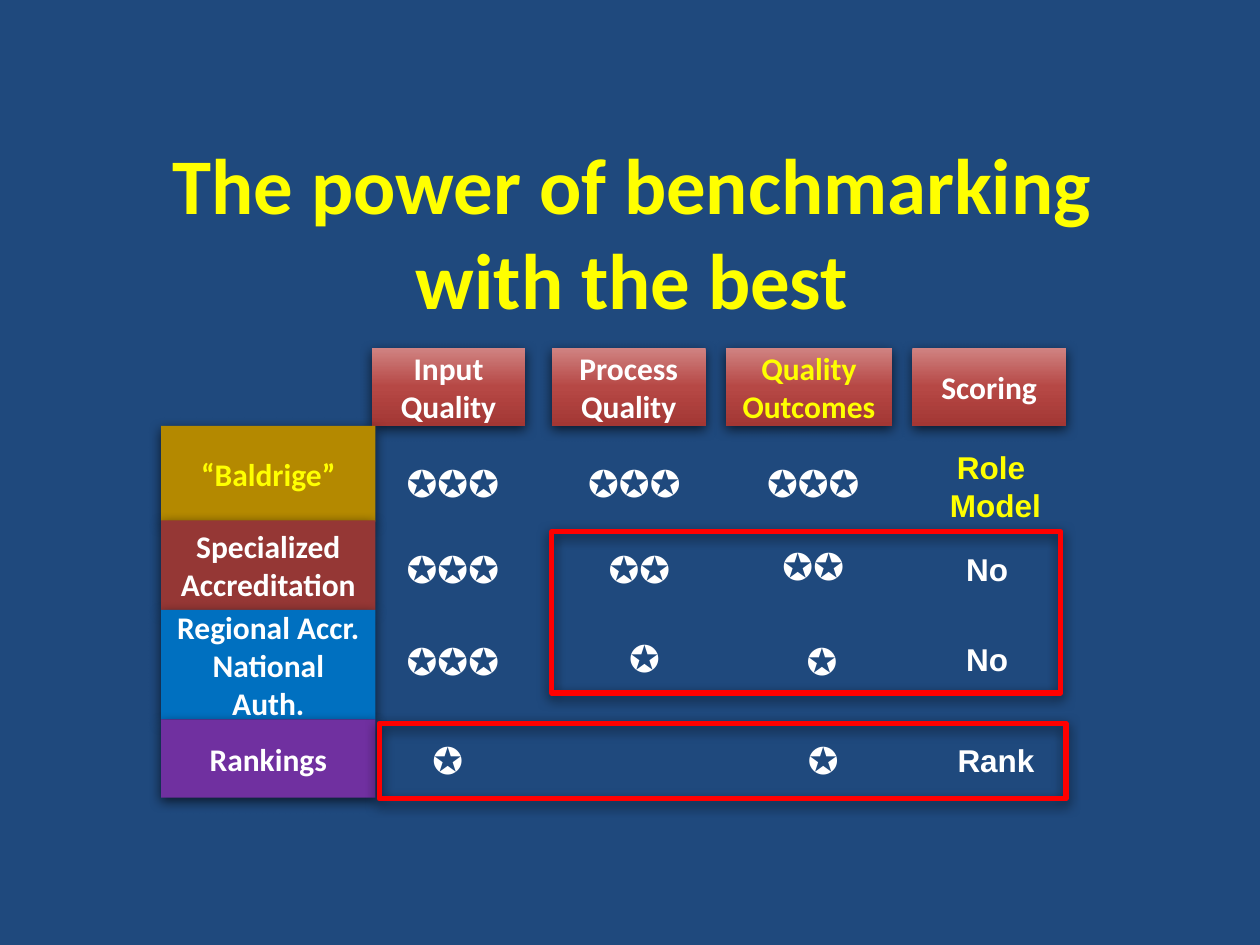
from copy import deepcopy
from dataclasses import dataclass
from typing import NamedTuple

from lxml.etree import SubElement
from pptx import Presentation
from pptx.dml.color import RGBColor as Rgb
from pptx.enum.shapes import MSO_SHAPE as Shape
from pptx.enum.text import MSO_ANCHOR as Anchor, PP_ALIGN as Align
from pptx.oxml.ns import qn
from pptx.util import Inches, Pt


@dataclass(frozen=True)
class Theme:
    background: str = "1F497D"
    white: str = "FFFFFF"
    yellow: str = "FFFF00"
    frame: str = "FF0000"
    shadow: str = "000000"
    header_stops: tuple = ((0, "D08382"), (0.5, "B64845"), (1, "A33734"))
    label_font: str = "Calibri"
    cell_font: str = "Arial"
    title_size: int = 45
    text_size: int = 18
    star_size: int = 21


THEME = Theme()


class Area(NamedTuple):
    left: float
    top: float
    width: float
    height: float


class Header(NamedTuple):
    text: str
    left: float
    width: float = 1.22
    color: str = THEME.white


class Stars(NamedTuple):
    count: int
    left: float
    top: float


class Score(NamedTuple):
    lines: tuple
    area: Area
    color: str = THEME.white


class Row(NamedTuple):
    label: str
    fill: str
    top: float
    height: float
    stars: tuple
    score: Score
    color: str = THEME.white


HEADER_TOP, HEADER_HEIGHT = 2.76, 0.62
LABEL_LEFT, LABEL_WIDTH = 1.28, 1.7
CELL_WIDTH, CELL_HEIGHT, FULL_CELL_HEIGHT = 0.93, 0.45, 0.81
FULL_COUNT = 3

HEADERS = (
    Header("Input Quality", 2.95),
    Header("Process Quality", 4.38),
    Header("Quality Outcomes", 5.76, 1.32, THEME.yellow),
    Header("Scoring", 7.24),
)
ROWS = (
    Row("“Baldrige”", "B48900", 3.38, 0.76,
        (Stars(3, 3.13, 3.61), Stars(3, 4.57, 3.61), Stars(3, 5.99, 3.61)),
        Score(("Role ", "Model"), Area(7.04, 3.51, 1.72, 0.71), THEME.yellow),
        THEME.yellow),
    Row("Specialized Accreditation", "953735", 4.13, 0.71,
        (Stars(3, 3.13, 4.29), Stars(2, 4.61, 4.29), Stars(2, 5.99, 4.27)),
        Score(("No",), Area(7.37, 4.32, CELL_WIDTH, 0.4))),
    Row("Regional Accr. National Auth.", "0070C0", 4.84, 0.87,
        (Stars(3, 3.13, 5.02), Stars(1, 4.65, 5), Stars(1, 6.06, 5.02)),
        Score(("No",), Area(7.37, 5.03, CELL_WIDTH, 0.4))),
    Row("Rankings", "7030A0", 5.71, 0.62,
        (Stars(1, 3.09, 5.81), Stars(1, 6.07, 5.81)),
        Score(("Rank",), Area(7.44, 5.83, CELL_WIDTH, 0.4))),
)
FRAMES = (Area(3.01, 5.74, 5.45, 0.6), Area(4.38, 4.22, 4.04, 1.28))
TITLE_AREA = Area(0.87, 1.03, 8.29, 1.62)


def inches(area: Area) -> list:
    return [Inches(value) for value in area]


def write(box, lines: tuple, size: int, font: str, color: str) -> None:
    frame = box.text_frame
    frame.word_wrap = True
    for index, line in enumerate(lines):
        para = frame.add_paragraph() if index else frame.paragraphs[0]
        para.alignment = Align.CENTER
        span = para.add_run()
        span.text = line
        for name, value in {"size": Pt(size), "name": font, "bold": True}.items():
            setattr(span.font, name, value)
        span.font.color.rgb = Rgb.from_string(color)


def add_text(page, area: Area, lines: tuple, size: int, font: str, color: str):
    box = page.shapes.add_textbox(*inches(area))
    write(box, lines, size, font, color)
    return box


def add_stars(page, stars: Stars) -> None:
    height = FULL_CELL_HEIGHT if stars.count == FULL_COUNT else CELL_HEIGHT
    box = add_text(page, Area(stars.left, stars.top, CELL_WIDTH, height),
                   ("✪" * stars.count,), THEME.star_size, THEME.cell_font, THEME.white)
    for name, value in {"margin_left": 0, "margin_right": 0}.items():
        setattr(box.text_frame, name, Inches(value))


def add_box(page, area: Area):
    box = page.shapes.add_shape(Shape.RECTANGLE, *inches(area))
    box.shadow.inherit = False
    box.line.fill.background()
    effects = box._element.spPr.find(qn("a:effectLst"))
    shadow = SubElement(effects, qn("a:outerShdw"), blurRad=str(Pt(7)),
                        dist=str(Pt(2.2)), dir="5400000", rotWithShape="0")
    color = SubElement(shadow, qn("a:srgbClr"), val=THEME.shadow)
    SubElement(color, qn("a:alpha"), val="63000")
    return box


def add_label(page, area: Area, text: str, color: str):
    box = add_box(page, area)
    box.text_frame.vertical_anchor = Anchor.MIDDLE
    write(box, (text,), THEME.text_size, THEME.label_font, color)
    return box


def add_header(page, header: Header) -> None:
    area = Area(header.left, HEADER_TOP, header.width, HEADER_HEIGHT)
    box = add_label(page, area, header.text, header.color)
    box.fill.gradient()
    box.fill.gradient_angle = 270
    stop_list = box._element.spPr.find(".//" + qn("a:gsLst"))
    stop_list.append(deepcopy(stop_list[0]))
    for stop, (position, color) in zip(box.fill.gradient_stops, THEME.header_stops):
        stop.position = position
        stop.color.rgb = Rgb.from_string(color)


def add_row(page, row: Row) -> None:
    area = Area(LABEL_LEFT, row.top, LABEL_WIDTH, row.height)
    label = add_label(page, area, row.label, row.color)
    label.fill.solid()
    label.fill.fore_color.rgb = Rgb.from_string(row.fill)
    for stars in row.stars:
        add_stars(page, stars)
    add_text(page, row.score.area, row.score.lines, THEME.text_size,
             THEME.cell_font, row.score.color)


def add_frame(page, area: Area) -> None:
    box = add_box(page, area)
    box.fill.background()
    box.line.color.rgb = Rgb.from_string(THEME.frame)
    box.line.width = Pt(3)


def main() -> None:
    deck = Presentation()
    deck.slide_width, deck.slide_height = Inches(10), Inches(7.5)
    page = deck.slides.add_slide(deck.slide_layouts[6])
    page.background.fill.solid()
    page.background.fill.fore_color.rgb = Rgb.from_string(THEME.background)
    for header in HEADERS:
        add_header(page, header)
    for row in ROWS:
        add_row(page, row)
    for area in FRAMES:
        add_frame(page, area)
    add_text(page, TITLE_AREA, ("The power of benchmarking with the best",),
             THEME.title_size, THEME.label_font, THEME.yellow)
    deck.save("out.pptx")


if __name__ == "__main__":
    main()
